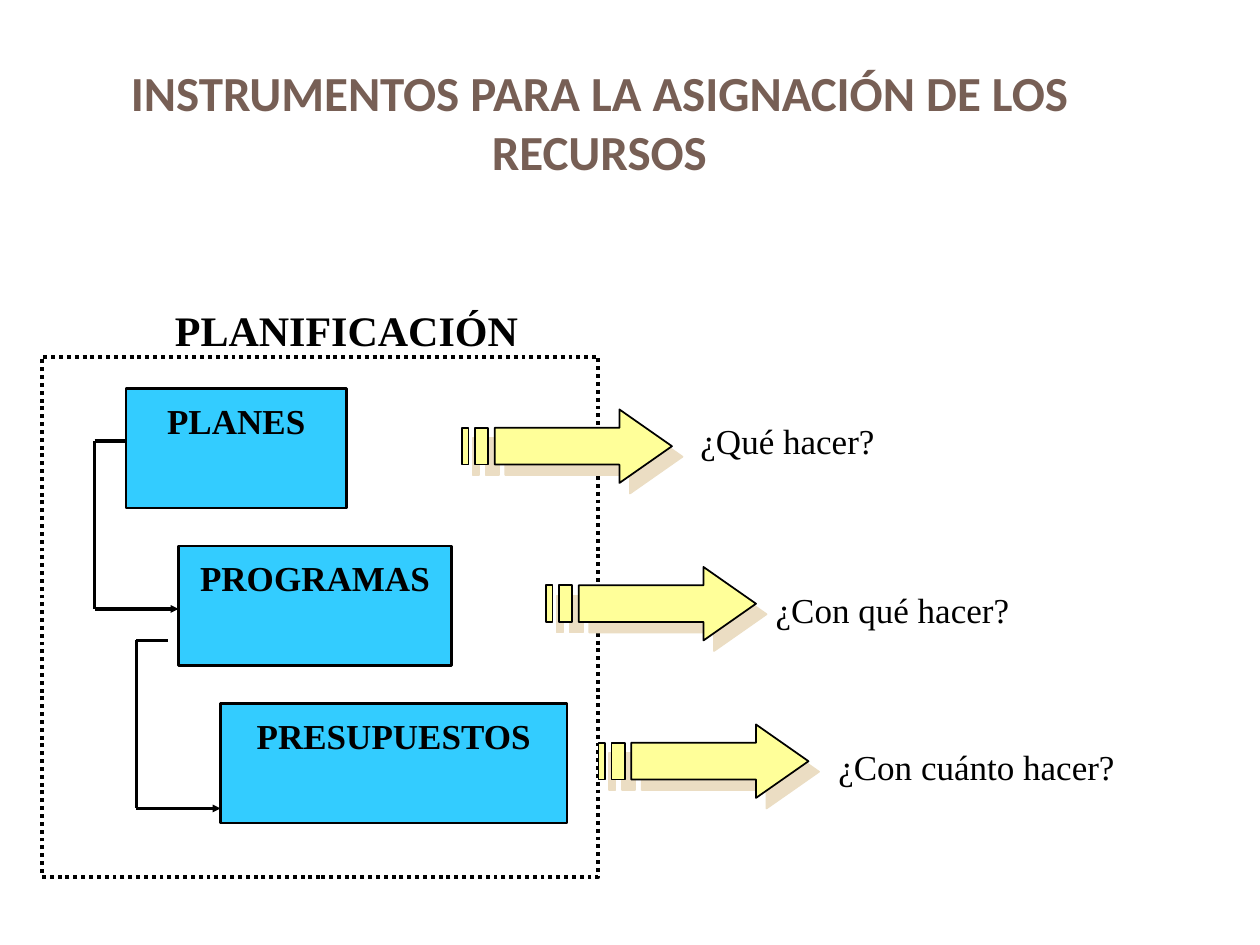
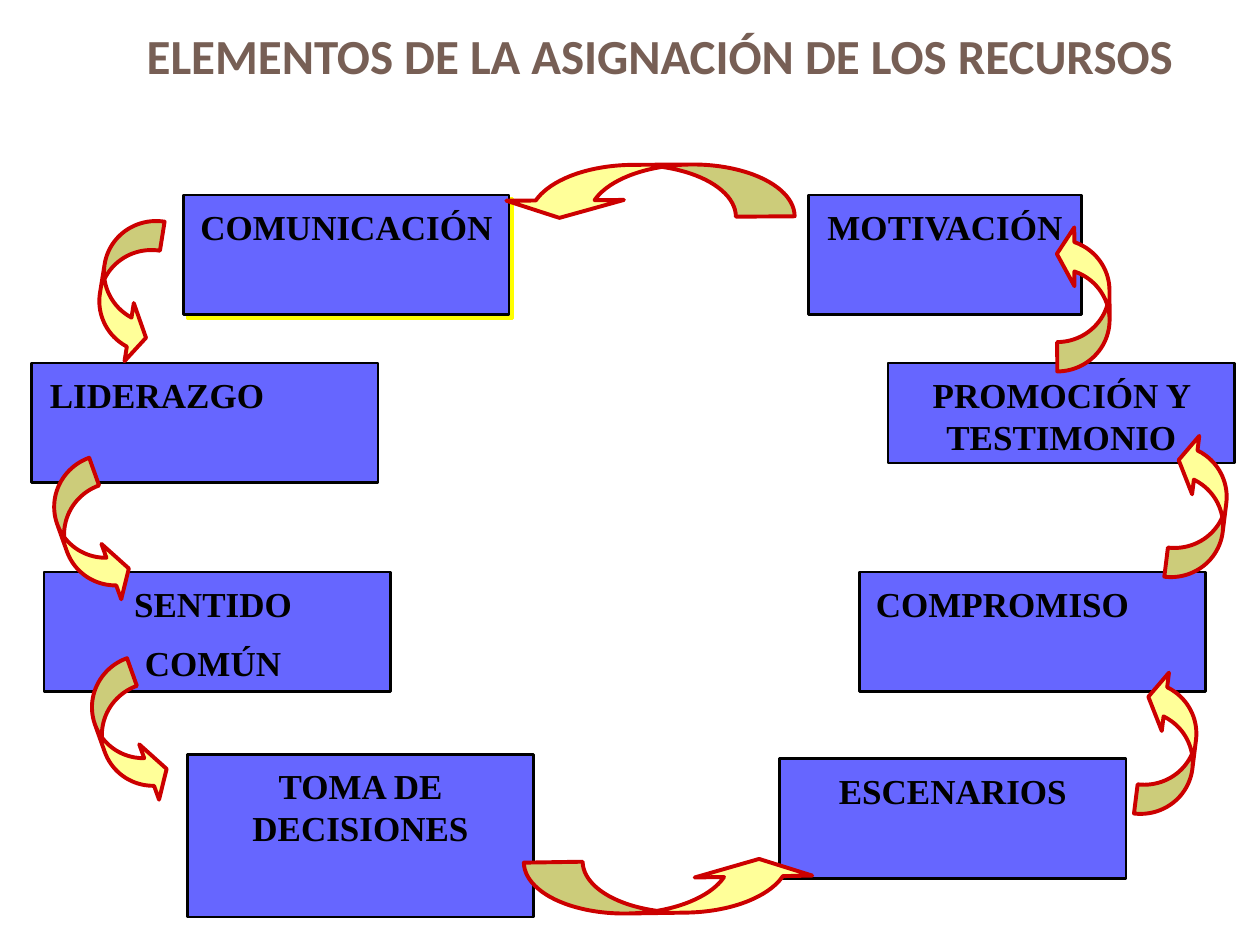
"""Build two slides on the instruments and elements of resource allocation."""

from lxml.etree import SubElement
from pptx import Presentation
from pptx.dml.color import RGBColor
from pptx.enum.dml import MSO_LINE
from pptx.enum.shapes import MSO_CONNECTOR, MSO_SHAPE
from pptx.enum.text import MSO_ANCHOR, PP_ALIGN
from pptx.oxml.ns import qn
from pptx.util import Pt

BROWN = RGBColor(0x77, 0x5F, 0x55)
BLACK = RGBColor(0x00, 0x00, 0x00)
SKY = RGBColor(0x33, 0xCC, 0xFF)
VIOLET = RGBColor(0x66, 0x66, 0xFF)
PALE_YELLOW = RGBColor(0xFF, 0xFF, 0x99)
YELLOW = RGBColor(0xFF, 0xFF, 0x00)
SAND = RGBColor(0xEB, 0xDD, 0xC3)
RED = RGBColor(0xCC, 0x00, 0x00)

TITLE_FONT = "Calibri"
BODY_FONT = "Times New Roman"
BOX_HEIGHT = 68.4
WIDE_BOX = 198
STEP = 90


def write_text(shape, text, size=20, bold=True, font=BODY_FONT, color=BLACK,
               align=PP_ALIGN.CENTER, anchor=MSO_ANCHOR.TOP, inset=6):
    """Write one paragraph per line of text and format it."""
    frame = shape.text_frame
    frame.text = text
    frame.word_wrap = True
    frame.vertical_anchor = anchor
    frame.margin_top = Pt(inset)
    for number, paragraph in enumerate(frame.paragraphs):
        paragraph.alignment = align
        if number:
            paragraph.space_before = Pt(10)
        for run in paragraph.runs:
            run.font.name = font
            run.font.size = Pt(size)
            run.font.bold = bold
            run.font.color.rgb = color


def style_shape(shape, fill, line, width):
    """Give a shape a flat fill, an outline and no shadow."""
    shape.shadow.inherit = False
    shape.fill.solid()
    shape.fill.fore_color.rgb = fill
    shape.line.color.rgb = line
    shape.line.width = Pt(width)


def cast_shadow(shape, color, distance):
    """Cast a hard shadow down and to the right."""
    effects = shape._element.spPr.find(qn("a:effectLst"))
    shadow = SubElement(effects, qn("a:outerShdw"), dist=str(Pt(distance)),
                        dir="2700000", algn="ctr", rotWithShape="0")
    SubElement(shadow, qn("a:srgbClr"), val=str(color))


def add_label(slide, text, left, top, width, height, **style):
    """Add a text box."""
    label = slide.shapes.add_textbox(Pt(left), Pt(top), Pt(width), Pt(height))
    write_text(label, text, **style)


def add_title(slide, text, left, top, width, height):
    """Add the slide title, set on the bottom of its area."""
    add_label(slide, text, left, top, width, height, size=28, font=TITLE_FONT,
              color=BROWN, anchor=MSO_ANCHOR.BOTTOM, inset=3.6)


def add_box(slide, text, left, top, width, fill, height=BOX_HEIGHT, **style):
    """Add an outlined box with a bold caption."""
    box = slide.shapes.add_shape(MSO_SHAPE.RECTANGLE, Pt(left), Pt(top),
                                 Pt(width), Pt(height))
    style_shape(box, fill, BLACK, 1.5)
    write_text(box, text, **style)
    return box


def add_dotted_frame(slide, left, top, width, height):
    """Add an empty frame with a dotted outline."""
    frame = slide.shapes.add_shape(MSO_SHAPE.RECTANGLE, Pt(left), Pt(top),
                                   Pt(width), Pt(height))
    frame.shadow.inherit = False
    frame.fill.background()
    frame.line.color.rgb = BLACK
    frame.line.width = Pt(2.25)
    frame.line.dash_style = MSO_LINE.ROUND_DOT


def add_line(slide, start, end, arrow=False):
    """Add a straight black line, with an arrowhead if asked."""
    line = slide.shapes.add_connector(MSO_CONNECTOR.STRAIGHT,
                                      *map(Pt, start + end))
    line.line.color.rgb = BLACK
    line.line.width = Pt(2.25)
    properties = line._element.spPr
    if arrow:
        SubElement(properties.find(qn("a:ln")), qn("a:tailEnd"),
                   type="triangle", w="sm", len="sm")
    SubElement(properties, qn("a:effectLst"))


def add_elbow(slide, spine, top):
    """Link two boxes with a spine and two arms, the lower one an arrow."""
    bottom = top + 96
    add_line(slide, (spine, top), (spine, bottom))
    add_line(slide, (spine, bottom), (spine + 48, bottom), arrow=True)
    add_line(slide, (spine, top), (spine + 18, top))


def add_striped_arrow(slide, left, top, width=120, height=42):
    """Add a right arrow trailed by two stripes, on a grid of 32 by 4."""
    head = [(24, 0), (24, 1), (5, 1), (5, 3), (24, 3), (24, 4), (32, 2)]
    stripes = [[(start, 1), (start, 3), (end, 3), (end, 1)]
               for start, end in ((2, 4), (0, 1))]
    builder = None
    for outline in [head] + stripes:
        points = [(Pt(left + x * width / 32), Pt(top + y * height / 4))
                  for x, y in outline]
        if builder is None:
            builder = slide.shapes.build_freeform(*points[0], scale=1.0)
        else:
            builder.move_to(*points[0])
        builder.add_line_segments(points[1:], close=True)
    arrow = builder.convert_to_shape()
    style_shape(arrow, PALE_YELLOW, BLACK, 1)
    cast_shadow(arrow, SAND, 8.5)


def add_curved_arrow(slide, left, top, rotation, length=84):
    """Add a curved arrow; a longer one keeps the same width."""
    width = 30
    arrow = slide.shapes.add_shape(MSO_SHAPE.CURVED_RIGHT_ARROW, Pt(left),
                                   Pt(top), Pt(width), Pt(length))
    style_shape(arrow, PALE_YELLOW, RED, 2.25)
    bend = length / width / 5
    for index, value in enumerate((bend, 2 * bend, 0.333)):
        arrow.adjustments[index] = value
    arrow.rotation = rotation


def build_instruments(slide):
    """Draw the cascade of planning instruments and their questions."""
    add_title(slide, "INSTRUMENTOS PARA LA ASIGNACIÓN DE LOS RECURSOS",
              16.5, 16.5, 652, 90)
    add_dotted_frame(slide, 24, 204, 318, 297)
    add_label(slide, "PLANIFICACIÓN", 90, 168, 216, 36, size=24)
    instruments = [
        ("PLANES", 72, 126, 264, "¿Qué hacer?", 384, 234, 132),
        ("PROGRAMAS", 102, 156, 312, "¿Con qué hacer?", 432, 330, 156),
        ("PRESUPUESTOS", 126, 198, 342, "¿Con cuánto hacer?", 456, 420, 204),
    ]
    for row, (name, left, width, arrow_left, question, question_left,
              question_top, question_width) in enumerate(instruments):
        add_box(slide, name, left, 222 + row * STEP, width, SKY)
        add_striped_arrow(slide, arrow_left, 234 + row * STEP)
        add_label(slide, question, question_left, question_top,
                  question_width, 31, bold=False)
    add_elbow(slide, 54, 252)
    add_elbow(slide, 78, 366)


def build_elements(slide):
    """Draw the ring of elements joined by curved arrows."""
    add_title(slide, "ELEMENTOS DE LA ASIGNACIÓN DE LOS RECURSOS",
              34, 11.5, 686, 40)
    add_box(slide, "MOTIVACIÓN", 462, 111.5, 156, VIOLET)
    communication = add_box(slide, "COMUNICACIÓN", 105, 111.5, 186, VIOLET)
    cast_shadow(communication, YELLOW, 2.8)
    leadership = add_box(slide, "LIDERAZGO", 18, 207.5, WIDE_BOX, VIOLET,
                         align=PP_ALIGN.LEFT)
    sense = add_box(slide, "SENTIDO\nCOMÚN", 25.2, 326.8, WIDE_BOX, VIOLET)
    add_box(slide, "PROMOCIÓN Y TESTIMONIO", 507.5, 207.5, WIDE_BOX, VIOLET,
            height=57)
    commitment = add_box(slide, "COMPROMISO", 491, 326.8, WIDE_BOX, VIOLET,
                         align=PP_ALIGN.LEFT)
    leadership.text_frame.margin_left = Pt(10.5)
    commitment.text_frame.margin_left = Pt(9.5)
    sense.text_frame.margin_right = Pt(12)
    add_box(slide, "TOMA DE DECISIONES", 107, 431, WIDE_BOX, VIOLET, height=93)
    add_box(slide, "ESCENARIOS", 445.5, 433.5, WIDE_BOX, VIOLET)

    for left, top, rotation in ((57.6, 123.8, 9.1), (36, 264.2, 340.3),
                                (57.6, 378.7, 340.3), (670.3, 247.7, 187),
                                (604, 128.2, 179.8), (653, 383, 187)):
        add_curved_arrow(slide, left, top, rotation)
    for left, top, rotation in ((355, 25.2, 89.6), (368.6, 422.6, 269.1)):
        add_curved_arrow(slide, left, top, rotation, length=168)


def main():
    """Build and save the presentation."""
    presentation = Presentation()
    presentation.slide_width = Pt(720)
    presentation.slide_height = Pt(540)
    blank = presentation.slide_layouts[6]
    for build in (build_instruments, build_elements):
        build(presentation.slides.add_slide(blank))
    presentation.save("out.pptx")


if __name__ == "__main__":
    main()
